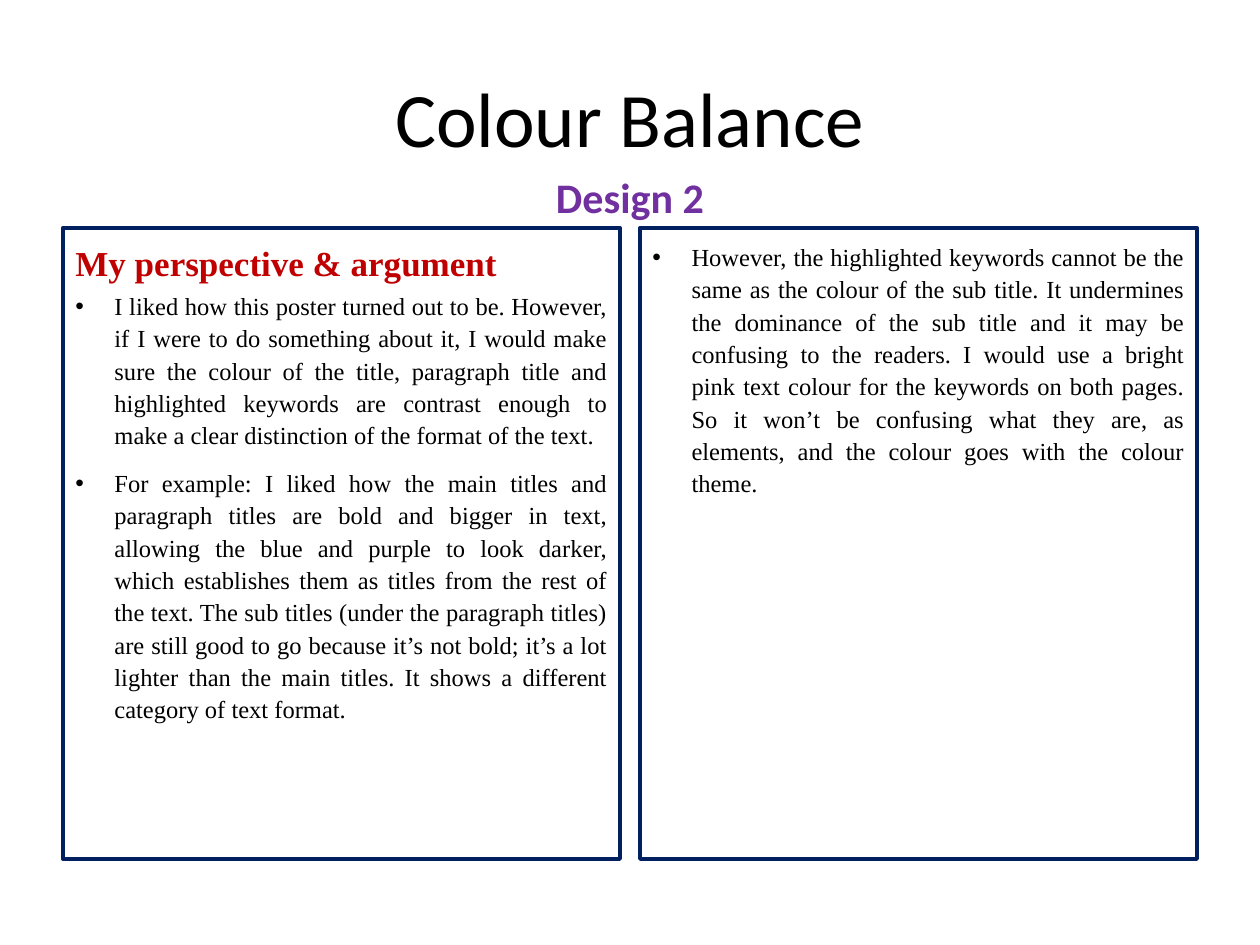
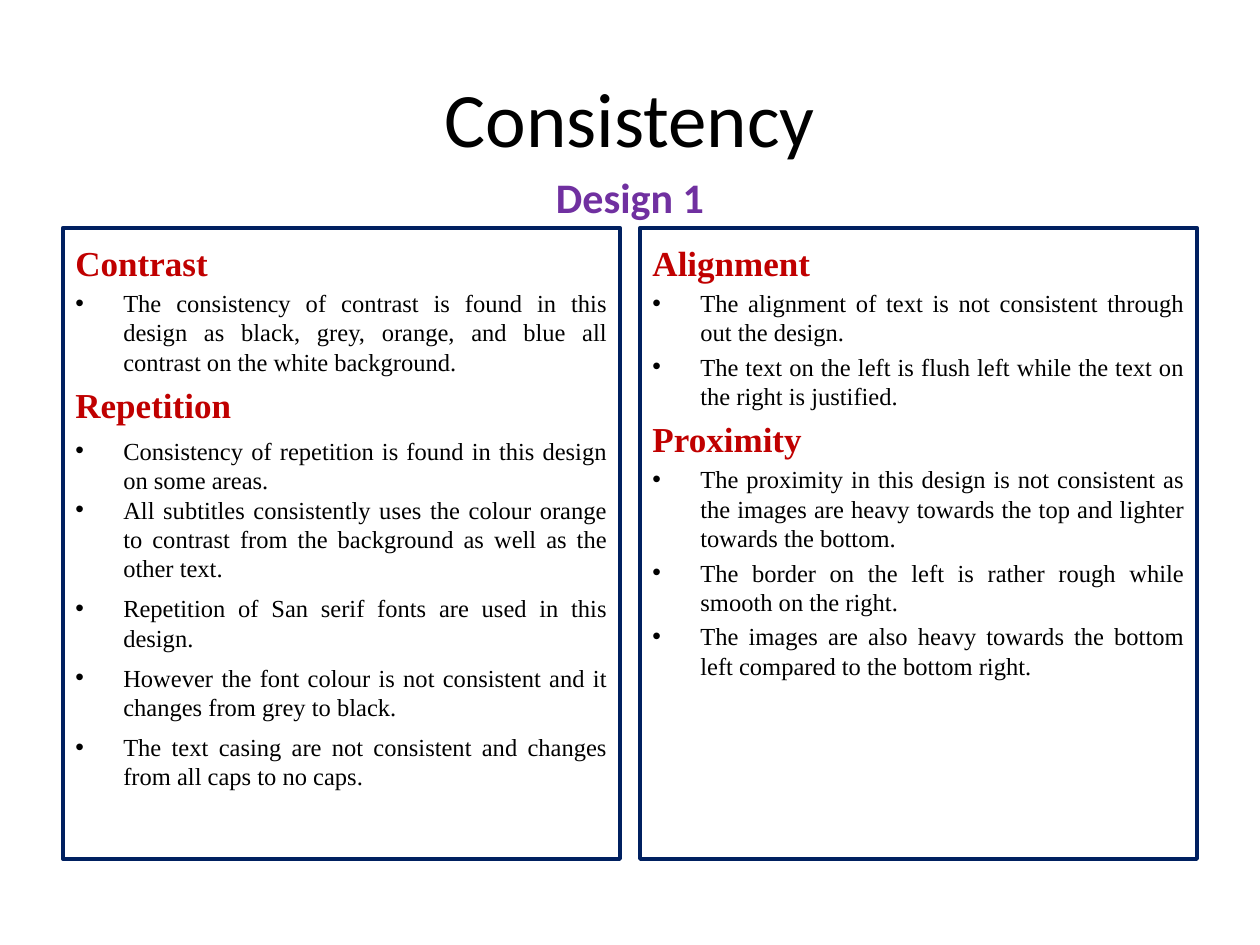
from dataclasses import dataclass, replace

from lxml import etree
from pptx import Presentation
from pptx.dml.color import RGBColor
from pptx.enum import text as txt
from pptx.enum import shapes
from pptx.oxml import ns
from pptx import util as u


@dataclass(frozen=True)
class Theme:
    """Colours, fonts and type sizes shared by the slides."""
    ink: str = "000000"
    heading: str = "C00000"
    design: str = "7030A0"
    border: str = "002060"
    border_width: float = 2.25
    display_font: str = "Calibri"
    body_font: str = "Times New Roman"
    title_size: int = 44
    design_size: int = 24
    heading_size: int = 20
    body_size: int = 14


THEME = Theme()


@dataclass(frozen=True)
class ParagraphStyle:
    size: int
    color: str
    bold: bool = False
    indent: float = 0  # inches; above zero means a bullet
    line_spacing: float = 1
    before: float = 0
    after: float = 0


# Paragraph styles: space before is a fifth of the type size
HEADING = ParagraphStyle(THEME.heading_size, THEME.heading, bold=True,
                         before=THEME.heading_size / 5)
HEADING_SPACED = replace(HEADING, after=6)
POINT = ParagraphStyle(THEME.body_size, THEME.ink, indent=0.38,
                       before=THEME.body_size / 5)
POINT_TIGHT = replace(POINT, before=0)
POINT_SPACED = replace(POINT_TIGHT, after=6)
ARGUMENT = replace(POINT, indent=0.31, line_spacing=1.1, after=6)


class Deck:
    # Shares of the slide's width and height
    MARGIN = 0.05
    GUTTER = 0.016
    TITLE_TOP, TITLE_HEIGHT = 0.04, 1 / 6
    DESIGN_TOP, DESIGN_HEIGHT = 0.175, 0.067
    PANEL_TOP, PANEL_HEIGHT = 0.241, 0.668
    INSET = 0.05  # inches

    def __init__(self, theme):
        self.theme = theme
        self.prs = Presentation()
        self.prs.slide_width, self.prs.slide_height = u.Inches(10), u.Inches(7.5)
        self.slide = None

    def box(self, left, top, width, height):
        """Turn shares of the slide into lengths."""
        w, h = self.prs.slide_width, self.prs.slide_height
        return int(left * w), int(top * h), int(width * w), int(height * h)

    def format_font(self, paragraph, name, size, color, bold=False):
        for run in paragraph.runs:
            run.font.name = name
            run.font.size = u.Pt(size)
            run.font.bold = bold
            run.font.color.rgb = RGBColor.from_string(color)

    def add_slide(self, title):
        self.slide = self.prs.slides.add_slide(self.prs.slide_layouts[5])
        heading = self.slide.shapes.title
        heading.left, heading.top, heading.width, heading.height = self.box(
            self.MARGIN, self.TITLE_TOP, 1 - 2 * self.MARGIN, self.TITLE_HEIGHT)
        frame = heading.text_frame
        frame.text = title
        frame.vertical_anchor = txt.MSO_ANCHOR.MIDDLE
        frame.paragraphs[0].alignment = txt.PP_ALIGN.CENTER
        self.format_font(frame.paragraphs[0], self.theme.display_font,
                         self.theme.title_size, self.theme.ink)

    def add_design_label(self, label):
        design = self.slide.shapes.add_textbox(*self.box(
            self.MARGIN, self.DESIGN_TOP, 1 - 2 * self.MARGIN, self.DESIGN_HEIGHT))
        frame = design.text_frame
        frame.word_wrap = True
        frame.text = label
        frame.paragraphs[0].alignment = txt.PP_ALIGN.CENTER
        self.format_font(frame.paragraphs[0], self.theme.display_font,
                         self.theme.design_size, self.theme.design, bold=True)

    def add_panel(self, column, content):
        width = (1 - 2 * self.MARGIN - self.GUTTER) / 2
        left = self.MARGIN + column * (width + self.GUTTER)
        panel = self.slide.shapes.add_shape(shapes.MSO_SHAPE.RECTANGLE, *self.box(
            left, self.PANEL_TOP, width, self.PANEL_HEIGHT))
        panel.shadow.inherit = False
        panel.fill.background()
        panel.line.color.rgb = RGBColor.from_string(self.theme.border)
        panel.line.width = u.Pt(self.theme.border_width)

        frame = panel.text_frame
        frame.word_wrap = True
        frame.vertical_anchor = txt.MSO_ANCHOR.TOP
        # The inset carries the first paragraph's space before
        frame.margin_top = u.Inches(self.INSET) + u.Pt(content[0][0].before)
        frame.text = "\n".join(words for _, words in content)
        for i, (paragraph, (style, _)) in enumerate(zip(frame.paragraphs, content)):
            self.format_paragraph(paragraph, style, first=i == 0)

    def format_paragraph(self, paragraph, style, first):
        paragraph.alignment = txt.PP_ALIGN.LEFT
        paragraph.line_spacing = style.line_spacing
        paragraph.space_before = u.Pt(0 if first else style.before)
        paragraph.space_after = u.Pt(style.after)
        if style.indent:
            paragraph.alignment = txt.PP_ALIGN.JUSTIFY
            self.add_bullet(paragraph, u.Inches(style.indent))
        self.format_font(paragraph, self.theme.body_font, style.size,
                         style.color, style.bold)

    def add_bullet(self, paragraph, indent):
        props = paragraph._p.get_or_add_pPr()
        props.set("marL", str(indent))
        props.set("indent", str(-indent))
        etree.SubElement(props, ns.qn("a:buFont"), typeface="Arial")
        etree.SubElement(props, ns.qn("a:buChar"), char="•")


# Slide content: title, design label, left panel, right panel
SLIDES = [
    ("Colour Balance", "Design 2", [
        (HEADING, "My perspective & argument"),
        (ARGUMENT, "I liked how this poster turned out to be. However, if I were to do "
                   "something about it, I would make sure the colour of the title, "
                   "paragraph title and highlighted keywords are contrast enough to make "
                   "a clear distinction of the format of the text."),
        (ARGUMENT, "For example: I liked how the main titles and paragraph titles are "
                   "bold and bigger in text, allowing the blue and purple to look darker, "
                   "which establishes them as titles from the rest of the text. The sub "
                   "titles (under the paragraph titles) are still good to go because it’s "
                   "not bold; it’s a lot lighter than the main titles. It shows a "
                   "different category of text format."),
    ], [
        (ARGUMENT, "However, the highlighted keywords cannot be the same as the colour of "
                   "the sub title. It undermines the dominance of the sub title and it may "
                   "be confusing to the readers. I would use a bright pink text colour for "
                   "the keywords on both pages. So it won’t be confusing what they are, as "
                   "elements, and the colour goes with the colour theme."),
    ]),
    ("Consistency", "Design 1", [
        (HEADING, "Contrast"),
        (POINT, "The consistency of contrast is found in this design as black, grey, "
                "orange, and blue all contrast on the white background."),
        (HEADING_SPACED, "Repetition"),
        (POINT_TIGHT, "Consistency of repetition is found in this design on some areas."),
        (POINT_SPACED, "All subtitles consistently uses the colour orange to contrast "
                       "from the background as well as the other text."),
        (POINT_SPACED, "Repetition of San serif fonts are used in this design."),
        (POINT_SPACED, "However the font colour is not consistent and it changes from "
                       "grey to black."),
        (POINT_SPACED, "The text casing are not consistent and changes from all caps to "
                       "no caps."),
    ], [
        (HEADING, "Alignment"),
        (POINT, "The alignment of text is not consistent through out the design."),
        (POINT, "The text on the left is flush left while the text on the right is "
                "justified."),
        (HEADING, "Proximity"),
        (POINT, "The proximity in this design is not consistent as the images are heavy "
                "towards the top and lighter towards the bottom."),
        (POINT, "The border on the left is rather rough while smooth on the right."),
        (POINT, "The images are also heavy towards the bottom left compared to the "
                "bottom right."),
    ]),
]


def main():
    deck = Deck(THEME)
    for title, design, *panels in SLIDES:
        deck.add_slide(title)
        for column, content in enumerate(panels):
            deck.add_panel(column, content)
        deck.add_design_label(design)
    deck.prs.save("out.pptx")


if __name__ == "__main__":
    main()
